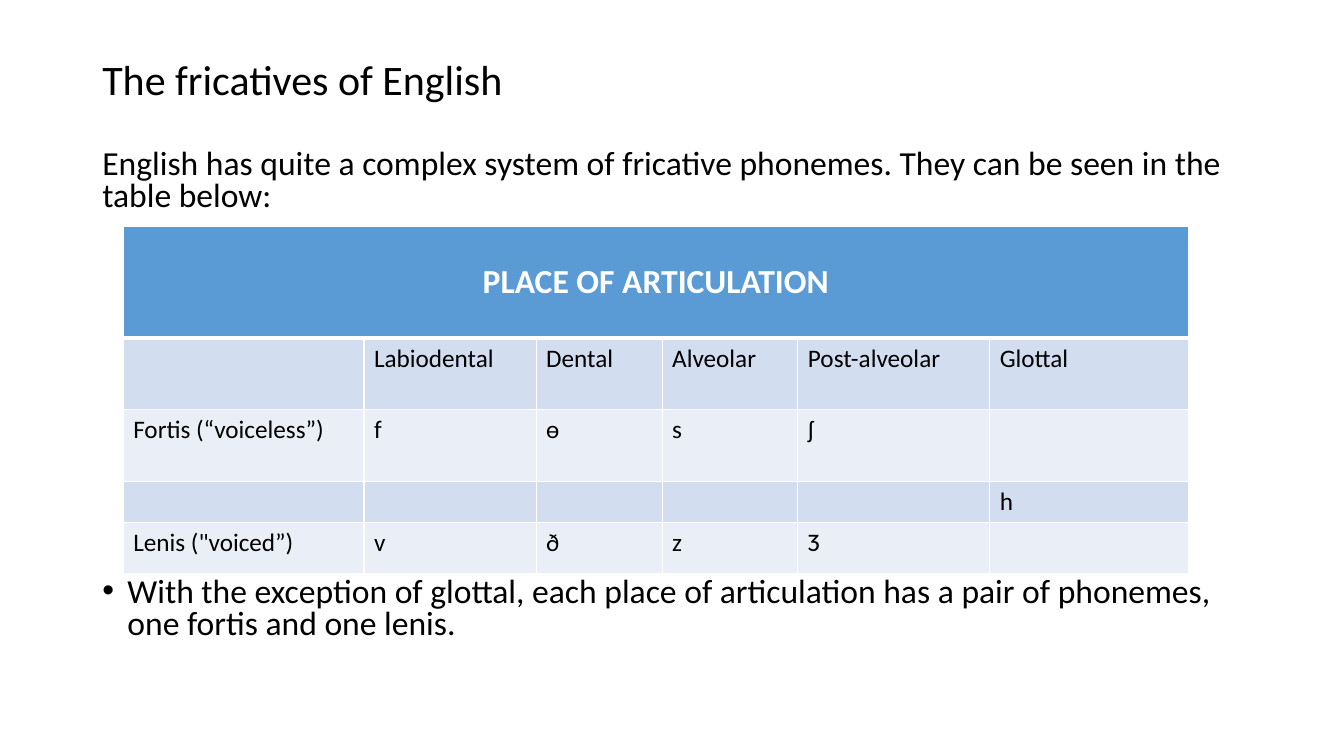
from lxml import etree
from pptx import Presentation
from pptx.dml.color import RGBColor
from pptx.enum.text import MSO_ANCHOR, PP_ALIGN
from pptx.oxml.ns import qn
from pptx.util import Pt

BLACK = RGBColor(0x00, 0x00, 0x00)
WHITE = RGBColor(0xFF, 0xFF, 0xFF)
BLUE = RGBColor(0x5B, 0x9B, 0xD5)
BANDS = (RGBColor(0xEA, 0xEF, 0xF7), RGBColor(0xD2, 0xDE, 0xEF))
CENTER = PP_ALIGN.CENTER
LEFT = PP_ALIGN.LEFT
MIDDLE = MSO_ANCHOR.MIDDLE
FACE = "Calibri"

TITLE = "The fricatives of English"
INTRO = ("English has quite a complex system of fricative phonemes. "
         "They can be seen in the table below:")
POINT = ("With the exception of glottal, each place of articulation "
         "has a pair of phonemes, one fortis and one lenis.")
HEAD = "PLACE OF ARTICULATION"
ROWS = (
    (HEAD, "", "", "", "", ""),
    ("", "Labiodental", "Dental", "Alveolar", "Post-alveolar", "Glottal"),
    ("Fortis (“voiceless”)", "f", "ѳ", "s", "ʃ", ""),
    ("", "", "", "", "", "h"),
    ("Lenis (\"voiced”)", "v", "ð", "z", "Ȝ", ""),
)
WIDTHS = (172, 123, 90, 97, 137, 142)
HEIGHTS = (80, 51, 51.5, 29.5, 36.5)


def set_font(para, size, color, bold=False):
    font = para.font
    font.name = FACE
    font.size = Pt(size)
    font.bold = bold
    font.color.rgb = color


def add_bullet(para, indent):
    props = para._p.get_or_add_pPr()
    props.set("marL", str(Pt(indent)))
    props.set("indent", str(-Pt(indent)))
    etree.SubElement(props, qn("a:buFont"), typeface="Arial")
    etree.SubElement(props, qn("a:buChar"), char="•")


def add_para(para, text, size, before=0, bullet=False):
    para.text = text
    para.line_spacing = 0.8
    para.space_before = Pt(before)
    if bullet:
        add_bullet(para, 18)
    set_font(para, size, BLACK)


def add_body(slide):
    box = slide.shapes.add_textbox(Pt(66), Pt(41.5), Pt(828), Pt(446))
    frame = box.text_frame
    frame.word_wrap = True
    add_para(frame.paragraphs[0], TITLE, 30)
    add_para(frame.add_paragraph(), INTRO, 24, 33)
    add_para(frame.add_paragraph(), POINT, 24, 259.5, True)


def add_edge(props, side, width):
    line = etree.SubElement(props, qn("a:ln" + side), w=str(Pt(width)))
    fill = etree.SubElement(line, qn("a:solidFill"))
    etree.SubElement(fill, qn("a:srgbClr"), val=str(WHITE))


def style_cell(cell, row, text):
    top = row == 0
    para = cell.text_frame.paragraphs[0]
    para.text = text
    para.alignment = CENTER if top else LEFT
    set_font(para, 24 if top else 18, WHITE if top else BLACK, top)
    if top:
        cell.vertical_anchor = MIDDLE
    props = cell._tc.get_or_add_tcPr()
    for side in "LRTB":
        thick = (row, side) in ((0, "B"), (1, "T"))
        add_edge(props, side, 3 if thick else 1)
    cell.fill.solid()
    cell.fill.fore_color.rgb = BLUE if top else BANDS[row % 2]


def add_grid(slide):
    frame = slide.shapes.add_table(
        len(ROWS), len(WIDTHS), Pt(88), Pt(161.5),
        Pt(sum(WIDTHS)), Pt(sum(HEIGHTS)))
    table = frame.table
    for col, width in zip(table.columns, WIDTHS):
        col.width = Pt(width)
    for row, height in zip(table.rows, HEIGHTS):
        row.height = Pt(height)
    for row, texts in enumerate(ROWS):
        for col, text in enumerate(texts):
            style_cell(table.cell(row, col), row, text)
    table.cell(0, 0).merge(table.cell(0, len(WIDTHS) - 1))


def main():
    deck = Presentation()
    deck.slide_width = Pt(960)
    deck.slide_height = Pt(540)
    slide = deck.slides.add_slide(deck.slide_layouts[6])
    add_body(slide)
    add_grid(slide)
    deck.save("out.pptx")


if __name__ == "__main__":
    main()
